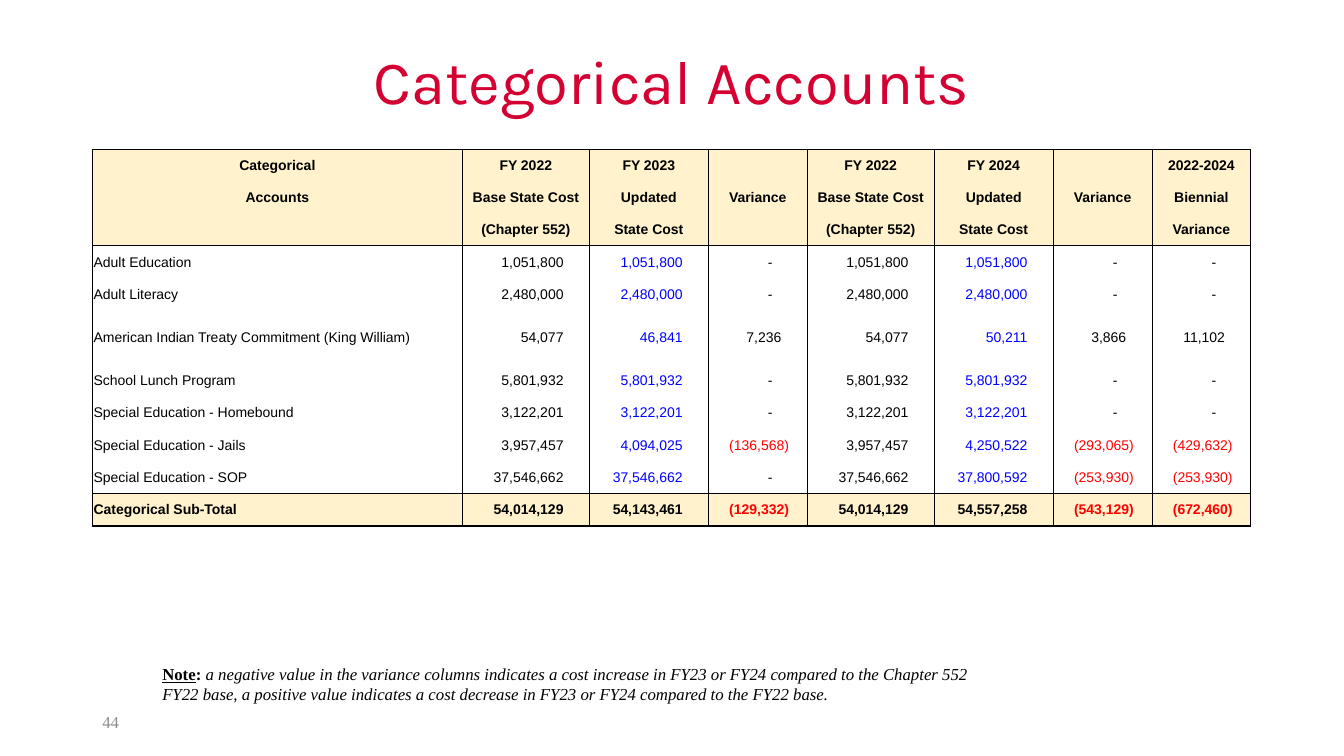
from dataclasses import dataclass

from lxml.etree import SubElement
from pptx import Presentation
from pptx.dml.color import RGBColor
from pptx.enum.text import MSO_ANCHOR, MSO_AUTO_SIZE, PP_ALIGN
from pptx.oxml.ns import qn
from pptx.util import Cm, Pt

BLACK, RED, BLUE = "000000", "FF0000", "0000FF"
CRIMSON, GREY, CREAM = "D50032", "8C8C8C", "FFF2CC"
SANS, SERIF = "Arial", "Times New Roman"


@dataclass
class Account:
    name: str
    base: int
    updated_2023: int
    variance_2023: int
    updated_2024: int
    variance_2024: int
    biennial_variance: int
    height: float = 0.81
    is_total: bool = False

    def amounts(self) -> list[int]:
        return [self.base, self.updated_2023, self.variance_2023,
                self.base, self.updated_2024, self.variance_2024,
                self.biennial_variance]


@dataclass
class Column:
    width: float
    heading: tuple[str, str, str]
    is_updated: bool = False


@dataclass
class Rules:
    """Widths in points of the lines above and below a table row."""
    top: float = 0
    bottom: float = 0


BASE = Column(3.2, ("FY 2022", "Base State Cost", "(Chapter 552)"))
VARIANCE = Column(2.49, ("", "Variance", ""))
COLUMNS = [
    Column(9.32, ("Categorical", "Accounts", "")),
    BASE,
    Column(3.0, ("FY 2023", "Updated", "State Cost"), True),
    VARIANCE,
    BASE,
    Column(3.0, ("FY 2024", "Updated", "State Cost"), True),
    VARIANCE,
    Column(2.49, ("2022-2024", "Biennial", "Variance")),
]
HEADING_ROWS = 3
HEADING_HEIGHT = 0.81

ACCOUNTS = [
    Account("Adult Education", 1051800, 1051800, 0, 1051800, 0, 0),
    Account("Adult Literacy", 2480000, 2480000, 0, 2480000, 0, 0),
    Account("American Indian Treaty Commitment (King William)",
            54077, 46841, 7236, 50211, 3866, 11102, height=1.37),
    Account("School Lunch Program", 5801932, 5801932, 0, 5801932, 0, 0),
    Account("Special Education - Homebound", 3122201, 3122201, 0, 3122201, 0, 0),
    Account("Special Education - Jails",
            3957457, 4094025, -136568, 4250522, -293065, -429632),
    Account("Special Education - SOP",
            37546662, 37546662, 0, 37800592, -253930, -253930),
    Account("Categorical Sub-Total", 54014129, 54143461, -129332,
            54557258, -543129, -672460, height=0.84, is_total=True),
]


def color(hex_code: str) -> RGBColor:
    return RGBColor.from_string(hex_code)


def format_run(run, font: str, size: float, hex_code: str, bold=False,
               italic=False, underline=False) -> None:
    run.font.name = font
    run.font.size = Pt(size)
    run.font.color.rgb = color(hex_code)
    run.font.bold = bold
    run.font.italic = italic
    run.font.underline = underline


def place(shape, left: float, top: float, width: float, height: float) -> None:
    shape.left, shape.top = Cm(left), Cm(top)
    shape.width, shape.height = Cm(width), Cm(height)


def draw_borders(cell, rules: Rules) -> None:
    properties = cell._tc.get_or_add_tcPr()
    edges = {"a:lnL": 0.5, "a:lnR": 0.5, "a:lnT": rules.top, "a:lnB": rules.bottom}
    for tag, points in edges.items():
        line = SubElement(properties, qn(tag), w=str(Pt(points)))
        if points:
            fill = SubElement(line, qn("a:solidFill"))
            SubElement(fill, qn("a:srgbClr"), val=BLACK)
        else:
            SubElement(line, qn("a:noFill"))


def fill_cell(cell, text: str, align: PP_ALIGN, rules: Rules, hex_code=BLACK,
              shaded=False, right_margin=0.03) -> None:
    draw_borders(cell, rules)
    if shaded:
        cell.fill.solid()
        cell.fill.fore_color.rgb = color(CREAM)
    else:
        cell.fill.background()
    cell.vertical_anchor = MSO_ANCHOR.MIDDLE
    cell.margin_left = cell.margin_top = Cm(0.03)
    cell.margin_right, cell.margin_bottom = Cm(right_margin), 0
    paragraph = cell.text_frame.paragraphs[0]
    paragraph.text = text
    paragraph.alignment = align
    for run in paragraph.runs:
        format_run(run, SANS, 10, hex_code, bold=shaded)


def amount_look(amount: int) -> tuple[str, float]:
    """Accounting notation and the right margin that lines it up."""
    if amount == 0:
        return "-", 0.87
    if amount < 0:
        return f"({-amount:,})", 0.46
    return f"{amount:,}", 0.65


def draw_table(slide) -> None:
    row_count = HEADING_ROWS + len(ACCOUNTS)
    heights = [HEADING_HEIGHT] * HEADING_ROWS + [a.height for a in ACCOUNTS]
    table = slide.shapes.add_table(
        row_count, len(COLUMNS), Cm(2.33), Cm(3.76),
        Cm(sum(column.width for column in COLUMNS)), Cm(sum(heights))).table
    table.first_row = table.horz_banding = False
    for row, height in zip(table.rows, heights):
        row.height = Cm(height)

    # Headings
    for index, column in enumerate(COLUMNS):
        table.columns[index].width = Cm(column.width)
        for level, text in enumerate(column.heading):
            rules = Rules(top=0.5 if level == 0 else 0,
                          bottom=0.5 if level == HEADING_ROWS - 1 else 0)
            fill_cell(table.cell(level, index), text, PP_ALIGN.CENTER, rules,
                      shaded=True)

    # Accounts and sub-total
    for row, account in enumerate(ACCOUNTS, HEADING_ROWS):
        total = account.is_total
        rules = Rules(top=0.5 if total or row == HEADING_ROWS else 0,
                      bottom=2 if total else 0.5 if row == row_count - 2 else 0)
        fill_cell(table.cell(row, 0), account.name, PP_ALIGN.LEFT, rules,
                  shaded=total)
        for index, amount in enumerate(account.amounts(), 1):
            text, margin = amount_look(amount)
            updated = COLUMNS[index].is_updated and not total
            hex_code = RED if amount < 0 else BLUE if updated else BLACK
            fill_cell(table.cell(row, index), text, PP_ALIGN.RIGHT, rules,
                      hex_code, total, margin)


def draw_title(slide) -> None:
    title = slide.shapes.title
    place(title, 2.33, 1.02, 29.21, 2.21)
    frame = title.text_frame
    frame.text = "Categorical Accounts"
    frame.auto_size = MSO_AUTO_SIZE.NONE
    frame.vertical_anchor = MSO_ANCHOR.MIDDLE
    paragraph = frame.paragraphs[0]
    paragraph.alignment = PP_ALIGN.CENTER
    paragraph.line_spacing = 0.9
    format_run(paragraph.runs[0], "Karla", 44, CRIMSON)


def draw_note(slide) -> None:
    note = slide.shapes.add_textbox(Cm(3.84), Cm(16.59), Cm(21.18), Cm(1.27))
    note.text_frame.word_wrap = True
    paragraph = note.text_frame.paragraphs[0]
    paragraph.text = "Note"
    format_run(paragraph.runs[0], SERIF, 12, BLACK, bold=True, underline=True)
    colon, explanation = paragraph.add_run(), paragraph.add_run()
    colon.text = ": "
    format_run(colon, SERIF, 12, BLACK, bold=True)
    explanation.text = (
        "a negative value in the variance columns indicates a cost increase in "
        "FY23 or FY24 compared to the Chapter 552 FY22 base, a positive value "
        "indicates a cost decrease in FY23 or FY24 compared to the FY22 base.")
    format_run(explanation, SERIF, 12, BLACK, italic=True)


def draw_page_number(slide) -> None:
    page_number = slide.shapes.add_textbox(Cm(2.33), Cm(17.68), Cm(7.62), Cm(1.01))
    frame = page_number.text_frame
    frame.text = "44"
    frame.word_wrap = True
    frame.vertical_anchor = MSO_ANCHOR.MIDDLE
    format_run(frame.paragraphs[0].runs[0], SERIF, 12, GREY)


def main() -> None:
    presentation = Presentation()
    presentation.slide_width, presentation.slide_height = Cm(33.87), Cm(19.05)
    slide = presentation.slides.add_slide(presentation.slide_layouts[5])
    draw_title(slide)
    draw_page_number(slide)
    draw_note(slide)
    draw_table(slide)
    presentation.save("out.pptx")


if __name__ == "__main__":
    main()
